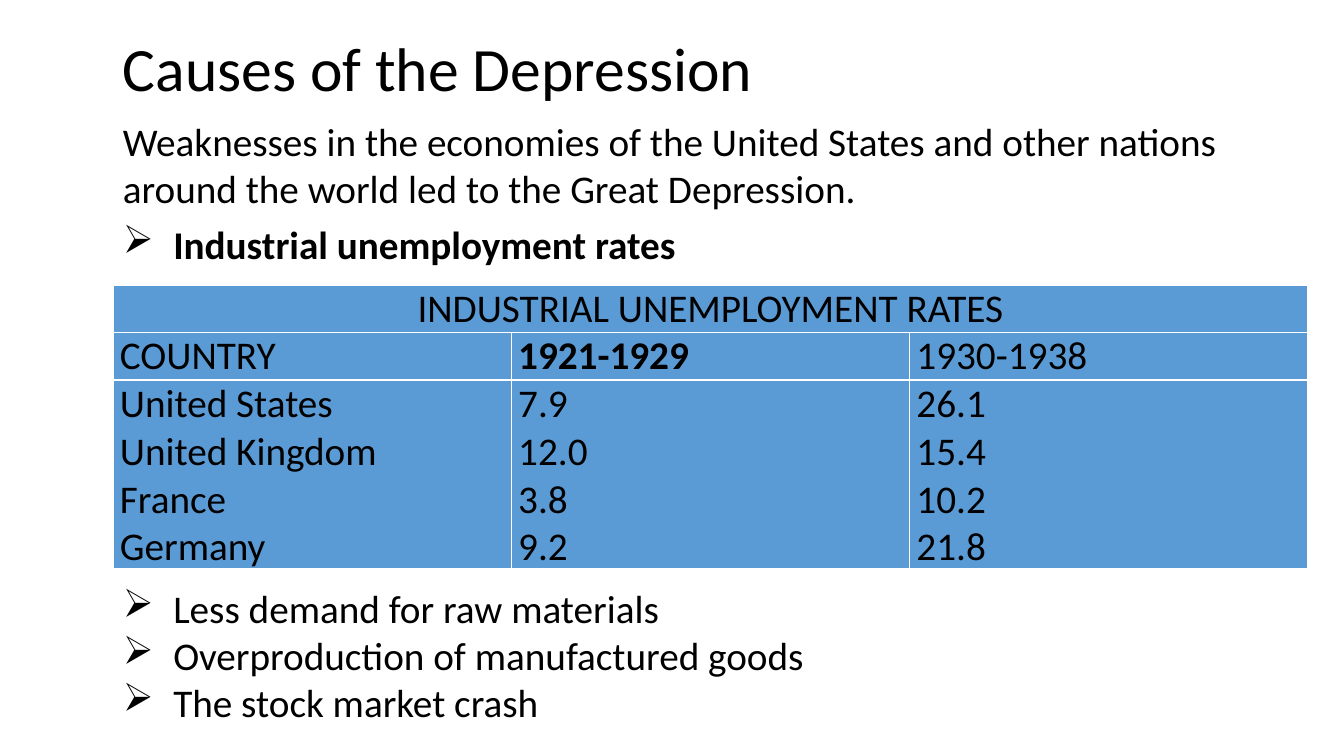
from dataclasses import dataclass

import pptx
import pptx.dml.color
import pptx.enum.text
import pptx.oxml
import pptx.oxml.ns
import pptx.util

Inches = pptx.util.Inches
Pt = pptx.util.Pt
Anchor = pptx.enum.text.MSO_ANCHOR
AutoSize = pptx.enum.text.MSO_AUTO_SIZE
Align = pptx.enum.text.PP_ALIGN

BLACK = pptx.dml.color.RGBColor(0x00, 0x00, 0x00)
WHITE = pptx.dml.color.RGBColor(0xFF, 0xFF, 0xFF)
BLUE = pptx.dml.color.RGBColor(0x5B, 0x9B, 0xD5)

FONT_FORMAT = {"name": "Calibri", "size": Pt(28), "bold": False}
CELL_FORMAT = {
    "margin_left": Inches(0.07),
    "margin_right": Inches(0.07),
    "margin_top": 0,
    "margin_bottom": 0,
}
LEFT = 1.12


@dataclass
class TextBlock:
    lines: list[str]
    top: float
    width: float
    height: float
    font: dict
    frame: dict
    bulleted: bool = False
    line_spacing: float | None = None


GROWING = {"word_wrap": True, "auto_size": AutoSize.SHAPE_TO_FIT_TEXT}

TEXT_BLOCKS = [
    TextBlock(["Causes of the Depression"], 0.23, 10.63, 1.64,
              {"size": Pt(44)},
              {"word_wrap": True, "vertical_anchor": Anchor.MIDDLE,
               "margin_bottom": Inches(0.72)},
              line_spacing=0.9),
    TextBlock(["Weaknesses in the economies of the United States and other "
               "nations around the world led to the Great Depression."],
              1.11, 11.95, 1.04, {}, GROWING),
    TextBlock(["Industrial unemployment rates"], 2.14, 5.69, 0.57,
              {"bold": True}, GROWING | {"word_wrap": False}, bulleted=True),
    TextBlock(["Less demand for raw materials",
               "Overproduction of manufactured goods",
               "The stock market crash"],
              5.75, 11.95, 1.51, {}, GROWING, bulleted=True),
]

TABLE_TITLE = "INDUSTRIAL UNEMPLOYMENT RATES"
TABLE_ROWS = [
    [[TABLE_TITLE], [], []],
    [["COUNTRY"], ["1921-1929"], ["1930-1938"]],
    [["United States", "United Kingdom", "France", "Germany"],
     ["7.9", "12.0", "3.8", "9.2"],
     ["26.1", "15.4", "10.2", "21.8"]],
]
ROW_HEIGHTS = [0.47, 0.47, 1.86]
COLUMN_WIDTH = 3.95


def apply_format(target: object, values: dict) -> None:
    for name, value in values.items():
        setattr(target, name, value)


def write_lines(text_frame, lines: list[str], font: dict) -> None:
    for index, line in enumerate(lines):
        paragraph = text_frame.paragraphs[0] if index == 0 else text_frame.add_paragraph()
        run = paragraph.add_run()
        run.text = line
        apply_format(run.font, FONT_FORMAT | font)
        run.font.color.rgb = BLACK


def add_bullet(paragraph) -> None:
    properties = paragraph._p.get_or_add_pPr()
    properties.set("marL", str(Inches(0.5)))
    properties.set("indent", str(-Inches(0.5)))
    bullet = pptx.oxml.parse_xml(
        f'<a:buChar {pptx.oxml.ns.nsdecls("a")} char="➢"/>')
    properties.append(bullet)


def add_text_block(slide, block: TextBlock) -> None:
    shape = slide.shapes.add_textbox(Inches(LEFT), Inches(block.top),
                                     Inches(block.width), Inches(block.height))
    apply_format(shape.text_frame, block.frame)
    write_lines(shape.text_frame, block.lines, block.font)
    for paragraph in shape.text_frame.paragraphs:
        if block.line_spacing:
            paragraph.line_spacing = block.line_spacing
        if block.bulleted:
            add_bullet(paragraph)


def add_borders(cell) -> None:
    properties = cell._tc.get_or_add_tcPr()
    for index, side in enumerate(("lnL", "lnR", "lnT", "lnB")):
        border = pptx.oxml.parse_xml(
            f'<a:{side} {pptx.oxml.ns.nsdecls("a")} w="{Pt(1)}">'
            f'<a:solidFill><a:srgbClr val="{WHITE}"/></a:solidFill></a:{side}>')
        properties.insert(index, border)


def add_rates_table(slide) -> None:
    column_count = len(TABLE_ROWS[0])
    table = slide.shapes.add_table(
        len(TABLE_ROWS), column_count, Inches(LEFT), Inches(2.83),
        Inches(COLUMN_WIDTH * column_count), Inches(sum(ROW_HEIGHTS))).table
    apply_format(table, {"first_row": False, "horz_banding": False})
    for column in table.columns:
        column.width = Inches(COLUMN_WIDTH)
    for row, height in zip(table.rows, ROW_HEIGHTS):
        row.height = Inches(height)

    for row, row_lines in zip(table.rows, TABLE_ROWS):
        for cell, lines in zip(row.cells, row_lines):
            apply_format(cell, CELL_FORMAT)
            cell.fill.solid()
            cell.fill.fore_color.rgb = BLUE
            add_borders(cell)
            write_lines(cell.text_frame, lines, {"bold": lines == ["1921-1929"]})

    # Title row across all columns
    title_cell = table.cell(0, 0)
    title_cell.merge(table.cell(0, column_count - 1))
    title_cell.text_frame.paragraphs[0].alignment = Align.CENTER


def main() -> None:
    presentation = pptx.Presentation()
    presentation.slide_width = Inches(13.33)
    presentation.slide_height = Inches(7.5)
    slide = presentation.slides.add_slide(presentation.slide_layouts[6])

    # Heading, introduction and bullet lists
    for block in TEXT_BLOCKS:
        add_text_block(slide, block)

    # Unemployment figures
    add_rates_table(slide)

    presentation.save("out.pptx")


if __name__ == "__main__":
    main()
